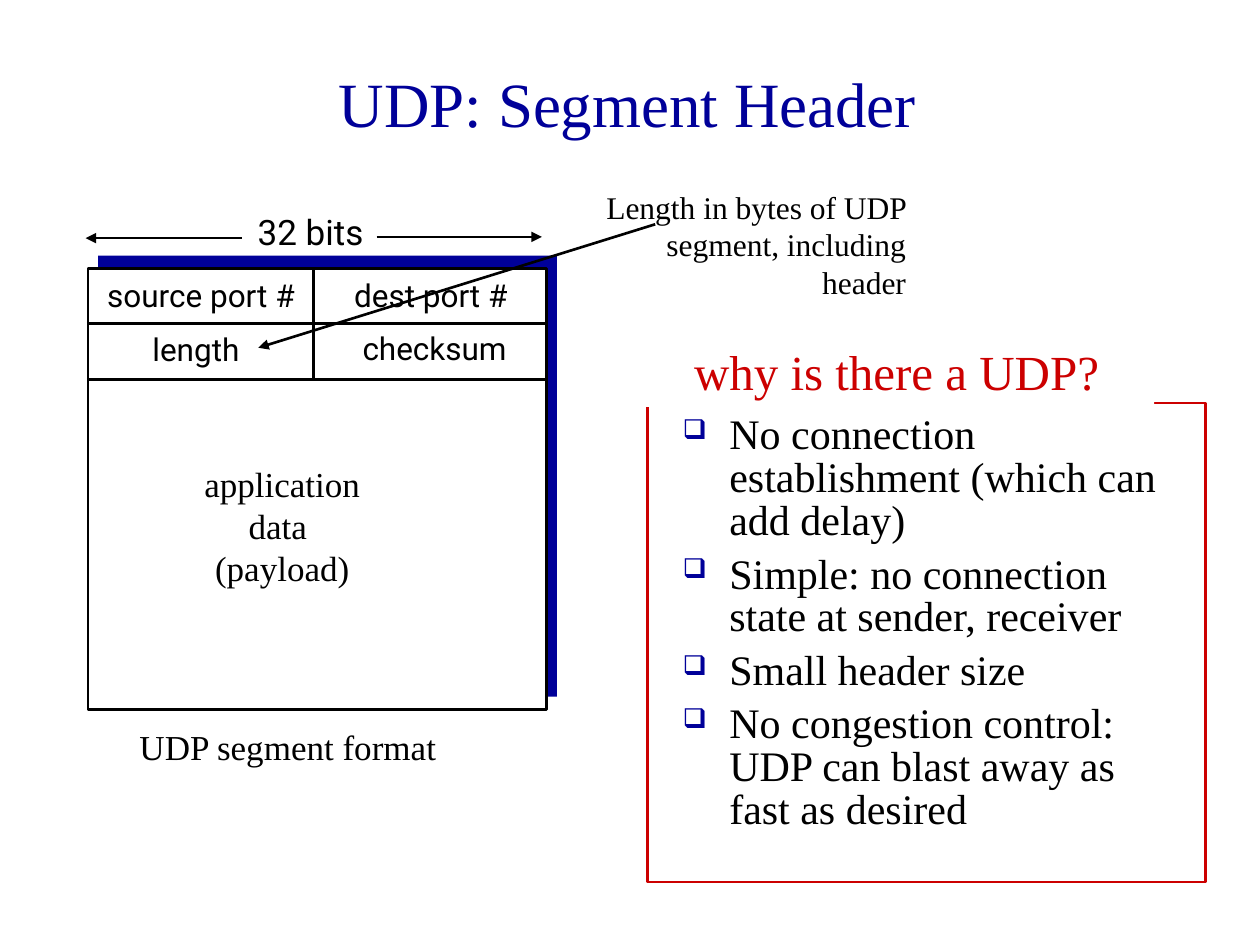
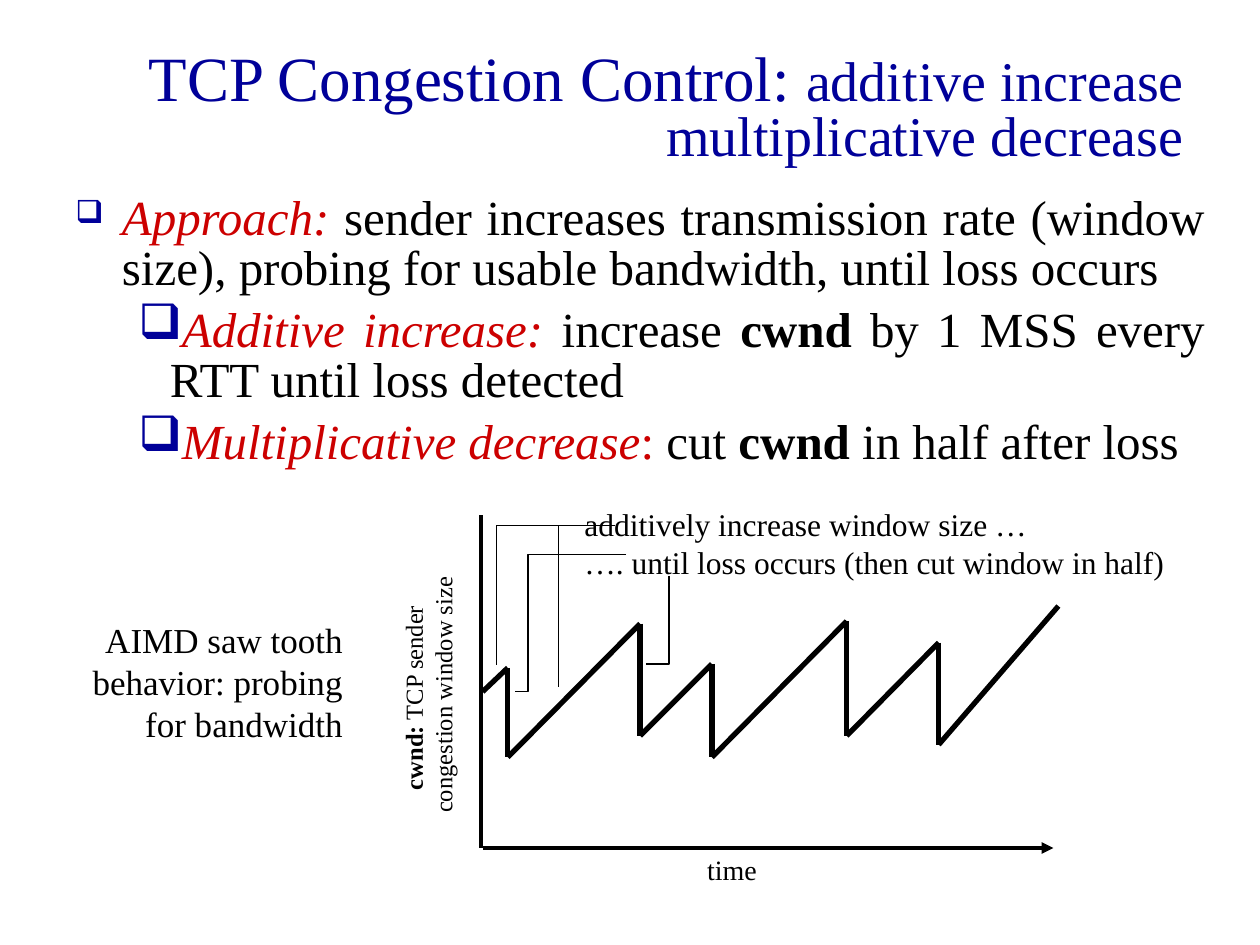
from lxml import etree
from pptx import Presentation
from pptx.dml import color as dml
from pptx.enum import shapes, text
from pptx.oxml import ns

PX = 9144
SERIF = "Times New Roman"
SANS = "Roboto"
COLORS = {"navy": "000099", "red": "CC0000", "black": "000000", "white": "FFFFFF"}
ALIGN = {
    "left": text.PP_ALIGN.LEFT,
    "center": text.PP_ALIGN.CENTER,
    "right": text.PP_ALIGN.RIGHT,
    "justify": text.PP_ALIGN.JUSTIFY,
}
TERM = {"color": "red", "italic": True}
STRONG = {"bold": True}


def rgb(name):
    return dml.RGBColor.from_string(COLORS[name])


def scaled(*lengths):
    return [length * PX for length in lengths]


def add_xml(parent, tag, **attributes):
    return etree.SubElement(parent, ns.qn(tag), attributes)


def style_run(run, size, font=SERIF, color="black", bold=False, italic=False):
    run.font.size = size * 12700
    run.font.name = font
    run.font.color.rgb = rgb(color)
    run.font.bold = bold
    run.font.italic = italic


def write(frame, lines, size, align="left", spacing=None, before=0, **style):
    for index, line in enumerate(lines):
        paragraph = frame.paragraphs[0] if index == 0 else frame.add_paragraph()
        paragraph.alignment = ALIGN[align]
        paragraph.space_before = before * 12700
        if spacing:
            paragraph.line_spacing = spacing
        parts = [(line, {})] if isinstance(line, str) else line
        for words, changes in parts:
            run = paragraph.add_run()
            run.text = words
            style_run(run, **{"size": size, **style, **changes})


def add_title(slide, box, parts, **layout):
    title = slide.shapes.title
    title.left, title.top, title.width, title.height = scaled(*box)
    title.text_frame.auto_size = text.MSO_AUTO_SIZE.NONE
    title.text_frame.vertical_anchor = text.MSO_ANCHOR.MIDDLE
    write(title.text_frame, [parts], 36, color="navy", **layout)


def add_label(slide, box, lines, size, wrap=False, **style):
    label = slide.shapes.add_textbox(*scaled(*box))
    label.text_frame.word_wrap = wrap
    write(label.text_frame, lines, size, **style)
    return label


def add_box(slide, box, fill=None, line=None):
    panel = slide.shapes.add_shape(shapes.MSO_SHAPE.RECTANGLE, *scaled(*box))
    panel.shadow.inherit = False
    if fill:
        panel.fill.solid()
        panel.fill.fore_color.rgb = rgb(fill)
    else:
        panel.fill.background()
    if line:
        panel.line.color.rgb = rgb(line)
        panel.line.width = 19050
    else:
        panel.line.fill.background()
    return panel


def add_line(slide, start, end, points=1.5, arrow=False):
    stroke = slide.shapes.add_connector(
        shapes.MSO_CONNECTOR.STRAIGHT, *scaled(*start, *end))
    stroke.line.color.rgb = rgb("black")
    stroke.line.width = int(points * 12700)
    if arrow:
        add_xml(stroke.line._get_or_add_ln(), "a:tailEnd", type="triangle")
    add_xml(stroke._element.spPr, "a:effectLst")


def add_leader(slide, points):
    builder = slide.shapes.build_freeform(*points[0], scale=PX)
    builder.add_line_segments(points[1:], close=False)
    leader = builder.convert_to_shape()
    leader.shadow.inherit = False
    leader.fill.background()
    leader.line.color.rgb = rgb("black")
    leader.line.width = 9525


def add_bullet(paragraph, margin, indent, level=0, percent=100):
    paragraph.level = level
    properties = paragraph._p.get_or_add_pPr()
    properties.set("marL", str(margin * PX))
    properties.set("indent", str(indent * PX))
    bullet_color = add_xml(properties, "a:buClr")
    add_xml(bullet_color, "a:srgbClr", val=COLORS["navy"])
    add_xml(properties, "a:buSzPct", val=str(percent * 1000))
    add_xml(properties, "a:buChar", char="❑")


def build_segment_header(slide):
    add_title(slide, (42, 27, 912, 109), "UDP: Segment Header", align="center")

    add_box(slide, (78, 203, 364, 350), fill="navy")
    add_box(slide, (70, 213, 364, 350), fill="white", line="black")
    for row_line in (257, 301):
        add_line(slide, (69, row_line), (433, row_line))
    add_line(slide, (249, 213), (249, 301))

    fields = [
        ((64, 214, 191, 40), "source port #"),
        ((261, 214, 162, 40), "dest port #"),
        ((106, 257, 99, 40), "length"),
        ((272, 256, 146, 40), "checksum"),
    ]
    for box, field in fields:
        add_label(slide, box, [field], 18, align="center", font=SANS)

    add_label(slide, (189, 162, 115, 44), ["32 bits"], 20, align="center", font=SANS)
    add_line(slide, (299, 188), (430, 188), arrow=True)
    add_line(slide, (192, 189), (68, 189), arrow=True)
    add_label(slide, (152, 362, 144, 111), ["application", "data ", "(payload)"],
              20, align="center")
    add_label(slide, (100, 571, 257, 44), ["UDP segment format"], 20, align="center")
    add_label(slide, (466, 144, 263, 100),
              ["Length in bytes of UDP segment, including header"],
              18, wrap=True, align="right")
    add_line(slide, (520, 178), (205, 276), arrow=True)

    reasons = add_label(slide, (532, 325, 417, 358), [
        "No connection establishment (which can add delay)",
        "Simple: no connection state at sender, receiver",
        "Small header size",
        "No congestion control: UDP can blast away as fast as desired",
    ], 24, wrap=True, spacing=0.85, before=6)
    for reason in reasons.text_frame.paragraphs:
        add_bullet(reason, 37, -37, percent=65)
    add_box(slide, (514, 320, 443, 380), line="red")
    question = add_box(slide, (507, 275, 409, 48), fill="white")
    question.text_frame.word_wrap = True
    write(question.text_frame, ["why is there a UDP?"], 28, align="center",
          spacing=0.8, before=7, color="red")


def build_congestion_control(slide):
    add_title(slide, (25, 25, 925, 125), [
        ("TCP Congestion Control: ", {}),
        ("additive increase multiplicative decrease", {"size": 32}),
    ], align="right", spacing=0.8)

    approach = add_label(slide, (50, 150, 916, 158), [
        [("Approach: ", TERM),
         ("sender increases transmission rate (window size), probing for "
          "usable bandwidth, until loss occurs", {})],
        [("Additive increase:", TERM), (" increase ", {}), ("cwnd", STRONG),
         (" by 1 MSS every RTT until loss detected", {})],
        [("Multiplicative decrease", TERM), (":", {"color": "red"}), (" cut ", {}),
         ("cwnd ", STRONG), ("in half after loss ", {})],
    ], 28, wrap=True, align="justify", spacing=0.85, before=7)
    main_point, *rules = approach.text_frame.paragraphs
    add_bullet(main_point, 37, -37, percent=65)
    for rule in rules:
        add_bullet(rule, 75, -25, level=1)

    window_axis = add_box(slide, (235, 523, 209, 57), fill="white")
    window_axis.rotation = 270
    window_axis.text_frame.word_wrap = False
    write(window_axis.text_frame,
          [[("cwnd:", STRONG), (" TCP sender ", {})], "congestion window size"],
          14, align="center")
    add_label(slide, (62, 486, 220, 111),
              ["AIMD saw tooth", "behavior: probing", "for bandwidth"],
              20, align="right")

    add_line(slide, (383, 673), (836, 673), points=2.25, arrow=True)
    add_line(slide, (382, 409), (382, 673), points=2.25)
    saw_tooth = [
        (383, 549), (403, 530), (403, 601), (508, 495), (508, 584), (565, 527),
        (565, 601), (672, 493), (672, 584), (745, 510), (745, 591), (840, 481),
    ]
    for start, end in zip(saw_tooth, saw_tooth[1:]):
        add_line(slide, start, end, points=3)

    add_label(slide, (454, 396, 485, 71), [
        "additively increase window size …",
        "…. until loss occurs (then cut window in half)",
    ], 18)
    leaders = [
        [(488, 417), (394, 417), (394, 528)],
        [(497, 440), (419, 440), (419, 549), (409, 549)],
        [(488, 417), (443, 417), (443, 545)],
        [(531, 457), (531, 527), (513, 527)],
    ]
    for points in leaders:
        add_leader(slide, points)
    add_label(slide, (551, 672, 60, 37), ["time"], 16, align="center")


def main():
    deck = Presentation()
    deck.slide_width, deck.slide_height = scaled(1000, 750)
    title_only = deck.slide_layouts[5]
    for build in (build_segment_header, build_congestion_control):
        build(deck.slides.add_slide(title_only))
    deck.save("out.pptx")


if __name__ == "__main__":
    main()
